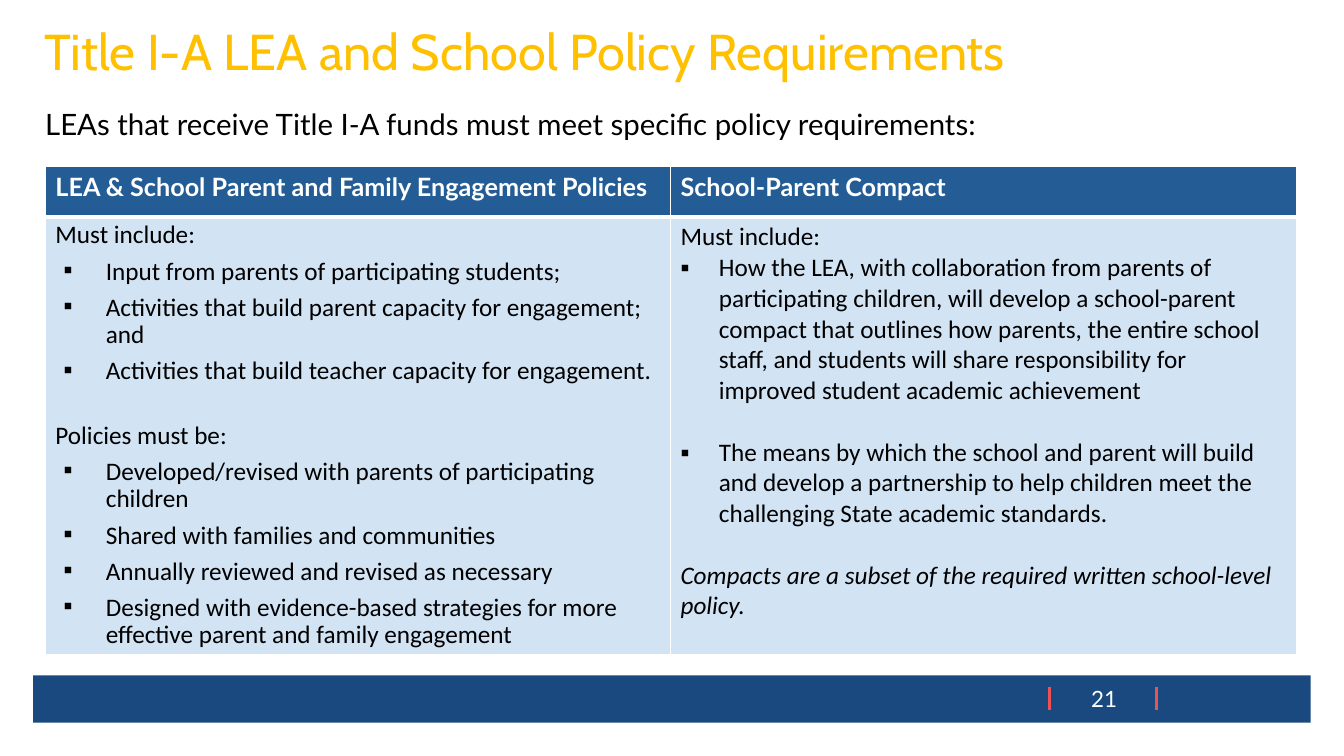
"""Build the slide on Title I-A LEA and school policy requirements."""
from lxml import etree
from pptx import Presentation, util as u
from pptx.dml.color import RGBColor
from pptx.enum import shapes, text
from pptx.oxml import ns

PX = 9144
WHITE, BLACK = "FFFFFF", "000000"


def color(hex_code):
    return RGBColor.from_string(hex_code)


def style(paragraph, size, font, hex_code, bold=False, italic=False):
    for run in paragraph.runs:
        run.font.size = u.Pt(size)
        run.font.name = font
        run.font.color.rgb = color(hex_code)
        run.font.bold = bold
        run.font.italic = italic


deck = Presentation()
deck.slide_width, deck.slide_height = 1333 * PX, 750 * PX
slide = deck.slides.add_slide(deck.slide_layouts[6])

footer = slide.shapes.add_shape(
    shapes.MSO_SHAPE.RECTANGLE, 33 * PX, 670 * PX, 1267 * PX, 47 * PX)
footer.shadow.inherit = False
footer.fill.solid()
footer.fill.fore_color.rgb = color("1A497F")
footer.line.fill.background()

for x in (1041, 1147):
    divider = slide.shapes.add_connector(
        shapes.MSO_CONNECTOR.STRAIGHT, x * PX, 682 * PX, x * PX, 704 * PX)
    divider.line.color.rgb = color("EC5153")
    divider.line.width = u.Pt(2.25)
    etree.SubElement(divider._element.spPr, ns.qn("a:effectLst"))

middle, top = text.MSO_ANCHOR.MIDDLE, text.MSO_ANCHOR.TOP
left, center = text.PP_ALIGN.LEFT, text.PP_ALIGN.CENTER
LABELS = [
    ("Title I-A LEA and School Policy Requirements",
     (34, 15, 1267, 77), 36, "Cabin", "FFC000", middle, left, 0.9),
    ("LEAs that receive Title I-A funds must meet specific policy requirements:",
     (35, 92, 1267, 93), 21, "Lato", BLACK, top, left, 1.23),
    ("21", (1063, 675, 64, 37), 16, "Lato", WHITE, middle, center, 1.0),
]
for words, box, size, font, hex_code, anchor, align, spacing in LABELS:
    label = slide.shapes.add_textbox(*(n * PX for n in box)).text_frame
    label.word_wrap = True
    label.vertical_anchor = anchor
    label.text = words
    line = label.paragraphs[0]
    line.alignment = align
    line.line_spacing = spacing
    style(line, size, font, hex_code)

HEADINGS = ["LEA & School Parent and Family Engagement Policies",
            "School-Parent Compact"]
POLICIES = [
    ("Must include:", False, 0),
    ("Input from parents of participating students;", True, 0),
    ("Activities that build parent capacity for engagement; and", True, 0),
    ("Activities that build teacher capacity for engagement.", True, 0),
    ("Policies must be:", False, 20),
    ("Developed/revised with parents of participating children", True, 0),
    ("Shared with families and communities", True, 0),
    ("Annually reviewed and revised as necessary", True, 0),
    ("Designed with evidence-based strategies for more effective parent "
     "and family engagement", True, 0),
]
COMPACT = [
    ("Must include:", False, 0),
    ("How the LEA, with collaboration from parents of participating children, "
     "will develop a school-parent compact that outlines how parents, the "
     "entire school staff, and students will share responsibility for "
     "improved student academic achievement", True, 0),
    ("The means by which the school and parent will build and develop a "
     "partnership to help children meet the challenging State academic "
     "standards.", True, 22),
    ("Compacts are a subset of the required written school-level policy.",
     False, 22),
]

requirements = slide.shapes.add_table(
    2, 2, 45 * PX, 165 * PX, 1241 * PX, 484 * PX).table
requirements.first_row = requirements.horz_banding = False
for column, width in zip(requirements.columns, (620, 621)):
    column.width = width * PX
for row, height in zip(requirements.rows, (50, 434)):
    row.height = height * PX

for row, fill in enumerate(("245D95", "D2E3F4")):
    for column in range(2):
        cell = requirements.cell(row, column)
        properties = cell._tc.get_or_add_tcPr()
        widths = {"L": 1, "R": 1, "T": 1 if row == 0 else 3,
                  "B": 3 if row == 0 else 1}
        for side, points in widths.items():
            border = etree.SubElement(
                properties, ns.qn(f"a:ln{side}"), w=str(u.Pt(points)))
            paint = etree.SubElement(border, ns.qn("a:solidFill"))
            etree.SubElement(paint, ns.qn("a:srgbClr"), val=WHITE)
        cell.fill.solid()
        cell.fill.fore_color.rgb = color(fill)

for column, heading in enumerate(HEADINGS):
    frame = requirements.cell(0, column).text_frame
    frame.text = heading
    style(frame.paragraphs[0], 18, "Lato", WHITE, bold=True)

BODIES = [(POLICIES, 50, 42, 0.9, 6), (COMPACT, 38, 38, 1.0, 0)]
for column, (items, margin, hanging, spacing, after) in enumerate(BODIES):
    frame = requirements.cell(1, column).text_frame
    frame.text = "\n".join(words for words, _, _ in items)
    for paragraph, (words, bulleted, before) in zip(frame.paragraphs, items):
        if bulleted:
            layout = paragraph._p.get_or_add_pPr()
            layout.set("marL", str(margin * PX))
            layout.set("indent", str(-hanging * PX))
            tint = etree.SubElement(layout, ns.qn("a:buClr"))
            etree.SubElement(tint, ns.qn("a:srgbClr"), val=BLACK)
            etree.SubElement(layout, ns.qn("a:buFont"), typeface="Calibri")
            etree.SubElement(layout, ns.qn("a:buChar"), char="▪")
        paragraph.line_spacing = spacing
        paragraph.space_after = u.Pt(after)
        if before:
            paragraph.space_before = u.Pt(before)
        style(paragraph, 18, "Calibri", BLACK,
              italic=words.startswith("Compacts"))

deck.save("out.pptx")
